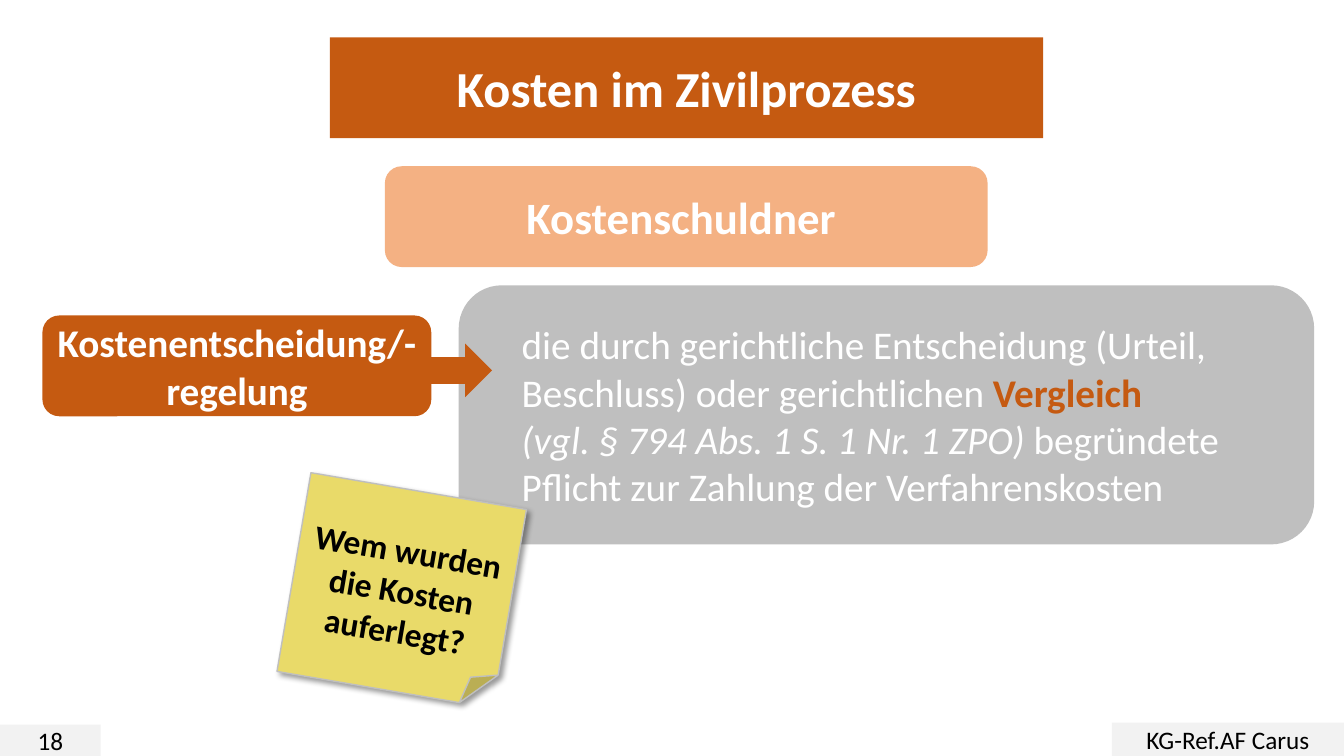
from lxml.etree import SubElement
from pptx import Presentation
from pptx.dml.color import RGBColor
from pptx.enum.shapes import MSO_SHAPE as Form
from pptx.enum.text import MSO_ANCHOR as Anchor, MSO_AUTO_SIZE as AutoSize, PP_ALIGN as Align
from pptx.oxml.ns import qn
from pptx.util import Cm, Pt

COLORS = {
    "orange": "C55A11", "peach": "F4B183", "grey": "BFBFBF", "pale": "F2F2F2",
    "note": "E9DA69", "white": "FFFFFF", "black": "000000",
}
BOX_HEIGHT = 2.54


def color(name):
    return RGBColor.from_string(COLORS[name])


def add_text(para, text, size=28, ink="white", bold=False, italic=False):
    span = para.add_run()
    span.text = text
    font = span.font
    font.name, font.size, font.bold, font.italic = "Calibri", Pt(size), bold, italic
    font.color.rgb = color(ink)


class SlideBuilder:
    """Holds the current slide and the common look of its elements."""

    def __init__(self, deck):
        self.page = deck.slides.add_slide(deck.slide_layouts[5])

    def style(self, shape, fill, paragraphs, align=Align.CENTER):
        """Fill a shape; each paragraph is a list of (text, format) pairs."""
        shape.fill.solid()
        shape.fill.fore_color.rgb = color(fill)
        shape.line.fill.background()
        frame = shape.text_frame
        frame.word_wrap = True
        frame.auto_size = AutoSize.NONE
        frame.vertical_anchor = Anchor.MIDDLE
        for index, pieces in enumerate(paragraphs):
            para = frame.add_paragraph() if index else frame.paragraphs[0]
            para.alignment = align
            for text, look in pieces:
                add_text(para, text, **look)

    def title(self, text, left, top, width, height):
        title = self.page.shapes.title
        title.left, title.top, title.width, title.height = map(Cm, (left, top, width, height))
        outline = SubElement(title._element.spPr, qn("a:prstGeom"), prst="roundRect")
        SubElement(outline, qn("a:avLst"))
        self.style(title, "orange", [[(text, dict(size=36, bold=True))]])

    def box(self, form, place, fill, paragraphs=(), align=Align.CENTER):
        shape = self.page.shapes.add_shape(form, *map(Cm, place))
        shape.shadow.inherit = False
        self.style(shape, fill, paragraphs, align)
        return shape

    def label(self, form, place, fill, text, **look):
        return self.box(form, place, fill, [[(text, look)]])

    def definition(self, place, paragraphs):
        box = self.box(Form.ROUNDED_RECTANGLE, place, "grey", paragraphs, Align.LEFT)
        for para in box.text_frame.paragraphs:
            para.level = 1
            props = para._p.get_or_add_pPr()
            props.set("marL", str(Cm(1.02)))
            props.set("indent", "0")

    def sticky_note(self, place, text):
        note = self.label(Form.FOLDED_CORNER, place, "note", text,
                          size=24, ink="black", bold=True)
        note.rotation = 9.7
        note.line.color.rgb = color("grey")
        note.line.width = Pt(1)
        note.text_frame.margin_top = Cm(0.97)
        # Soft shadow towards the lower right
        effects = note._element.spPr.find(qn("a:effectLst"))
        shadow = SubElement(effects, qn("a:outerShdw"), blurRad=str(Pt(4)), dist=str(Pt(3)),
                            dir="2700000", algn="tl", rotWithShape="0")
        tint = SubElement(shadow, qn("a:srgbClr"), val=COLORS["black"])
        SubElement(tint, qn("a:alpha"), val="40000")


def main():
    deck = Presentation()
    deck.slide_width, deck.slide_height = Cm(33.87), Cm(19.05)
    slide = SlideBuilder(deck)

    # Headings and definition
    slide.title("Kosten im Zivilprozess", 8.31, 0.94, 17.98, BOX_HEIGHT)
    slide.definition((11.56, 7.19, 21.56, 6.53), [
        [("die durch gerichtliche Entscheidung (Urteil, Beschluss) oder gerichtlichen ", {}),
         ("Vergleich", dict(ink="orange", bold=True))],
        [("(vgl. § 794 Abs. 1 S. 1 Nr. 1 ZPO) ", dict(italic=True)),
         ("begründete Pflicht zur Zahlung der Verfahrenskosten", {})],
    ])
    slide.label(Form.ROUNDED_RECTANGLE, (9.7, 4.19, 15.19, BOX_HEIGHT), "peach",
                "Kostenschuldner ", size=32, bold=True)

    # Footer
    for place, text in (((28.02, 18.21, 5.85, 0.84), "KG-Ref.AF Carus"),
                        ((0, 18.26, 2.54, 0.79), "18")):
        slide.label(Form.RECTANGLE, place, "pale", text, size=18, ink="black")

    # Note, then the term with its arrow
    slide.sticky_note((7.37, 12.34, 5.51, 5.08), "Wem wurden die Kosten auferlegt?")
    slide.box(Form.RIGHT_ARROW, (9.68, 8.66, 2.72, 1.35), "orange")
    slide.label(Form.ROUNDED_RECTANGLE, (1.07, 7.95, 9.8, BOX_HEIGHT), "orange",
                "Kostenentscheidung/-regelung", bold=True)

    deck.save("out.pptx")


if __name__ == "__main__":
    main()
